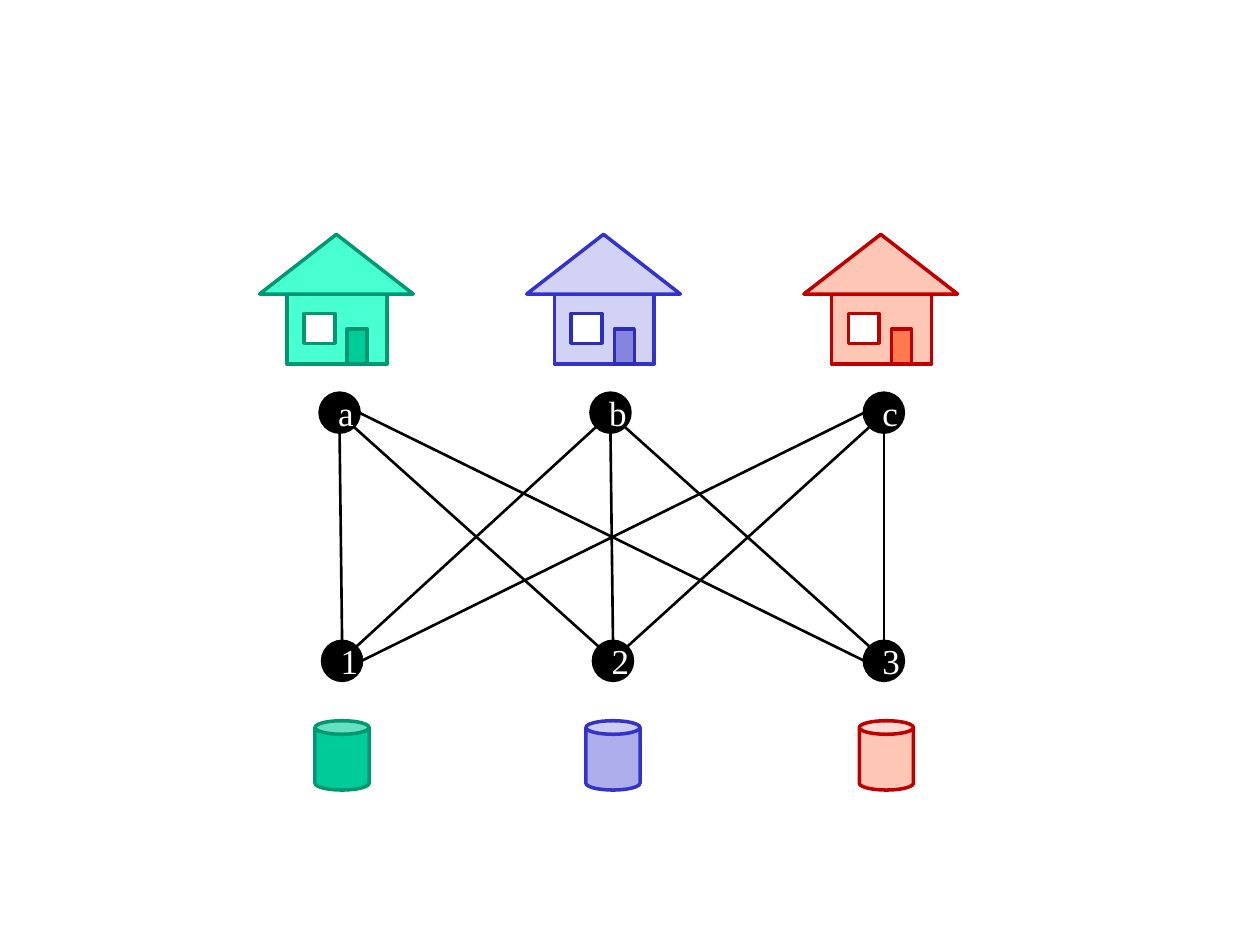
from dataclasses import dataclass

from lxml import etree
from pptx import Presentation
from pptx import util as u
from pptx.dml.color import RGBColor
from pptx.enum import shapes, text
from pptx.oxml.ns import qn

PRESET = shapes.MSO_SHAPE
BLACK, WHITE = "000000", "FFFFFF"


@dataclass
class Box:
    left: float
    top: float
    width: float
    height: float

    def inner(self, left, top, width, height):
        """Return the inner box given as shares of this one."""
        return Box(self.left + left * self.width, self.top + top * self.height,
                   width * self.width, height * self.height)

    def point(self, across, down):
        return self.left + across * self.width, self.top + down * self.height

    def lengths(self):
        return [u.Inches(v) for v in (self.left, self.top, self.width, self.height)]


@dataclass
class Palette:
    wall: str
    door: str
    can: str
    edge: str
    trim: str


PALETTES = [
    Palette("47FFD1", "00CC99", "00CC99", "009771", "009771"),
    Palette("D2D2F4", "8585E0", "ADADEB", "3333CC", "2D2DB9"),
    Palette("FEC6B4", "FD7A51", "FEC6B4", "C00000", "C00000"),
]
HOUSE_LEFTS = [2.06, 4.18, 6.38]
CAN_LEFTS = [2.5, 4.65, 6.82]
UPPER_NODES = [("a", 2.54), ("b", 4.69), ("c", 6.86)]
LOWER_NODES = [("1", 2.56), ("2", 4.71), ("3", 6.86)]
NODE_SIZE = 0.31

# Point on the upper circle where an edge leaves, by columns to the right;
# the lower circle is met at the opposite point.
LEAVING = {-2: (0, 0.5), -1: (0.15, 0.85), 0: (0.5, 1),
           1: (0.85, 0.85), 2: (1, 0.5)}


def colour(hex_value):
    return RGBColor.from_string(hex_value)


def draw_shape(page, preset, box, fill, edge):
    shape = page.shapes.add_shape(preset, *box.lengths())
    shape.shadow.inherit = False
    shape.fill.solid()
    shape.fill.fore_color.rgb = colour(fill)
    shape.line.color.rgb = colour(edge)
    shape.line.width = u.Pt(2)
    return shape


def draw_house(page, box, palette):
    pieces = [
        (PRESET.RECTANGLE, (0.18, 0.46, 0.65, 0.54), palette.wall, palette.edge),
        (PRESET.ISOSCELES_TRIANGLE, (0, 0, 1, 0.46), palette.wall, palette.edge),
        (PRESET.RECTANGLE, (0.57, 0.73, 0.13, 0.27), palette.door, palette.trim),
        (PRESET.RECTANGLE, (0.29, 0.61, 0.2, 0.23), WHITE, palette.trim),
    ]
    for preset, shares, fill, edge in pieces:
        draw_shape(page, preset, box.inner(*shares), fill, edge)


def draw_node(page, box, label):
    node = draw_shape(page, PRESET.OVAL, box, BLACK, BLACK)
    frame = node.text_frame
    frame.word_wrap = True
    frame.vertical_anchor = text.MSO_ANCHOR.MIDDLE
    para = frame.paragraphs[0]
    para.alignment = text.PP_ALIGN.CENTER
    span = para.add_run()
    span.text = label
    for name, value in {"name": "Times New Roman", "size": u.Pt(20)}.items():
        setattr(span.font, name, value)
    span.font.color.rgb = colour(WHITE)


def draw_edge(page, upper, lower, columns):
    across, down = LEAVING[columns]
    ends = upper.point(across, down) + lower.point(1 - across, 1 - down)
    edge = page.shapes.add_connector(shapes.MSO_CONNECTOR.STRAIGHT,
                                     *[u.Inches(v) for v in ends])
    edge.line.color.rgb = colour(BLACK)
    edge.line.width = u.Pt(1.5)
    etree.SubElement(edge._element.spPr, qn("a:effectLst"))


def draw_graph(page, upper_top, lower_top):
    """Join every upper node to every lower node."""
    rows = []
    for nodes, top in ((UPPER_NODES, upper_top), (LOWER_NODES, lower_top)):
        boxes = [Box(left, top, NODE_SIZE, NODE_SIZE) for _, left in nodes]
        for (label, _), box in zip(nodes, boxes):
            draw_node(page, box, label)
        rows.append(boxes)
    for start, upper in enumerate(rows[0]):
        for end, lower in enumerate(rows[1]):
            draw_edge(page, upper, lower, end - start)


def main():
    deck = Presentation()
    deck.slide_width, deck.slide_height = u.Inches(10), u.Inches(7.5)
    page = deck.slides.add_slide(deck.slide_layouts[6])
    for left, palette in zip(HOUSE_LEFTS, PALETTES):
        draw_house(page, Box(left, 1.86, 1.22, 1.03), palette)
    draw_graph(page, 3.12, 5.09)
    for left, palette in zip(CAN_LEFTS, PALETTES):
        draw_shape(page, PRESET.CAN, Box(left, 5.72, 0.43, 0.55),
                   palette.can, palette.edge)
    deck.save("out.pptx")


if __name__ == "__main__":
    main()
